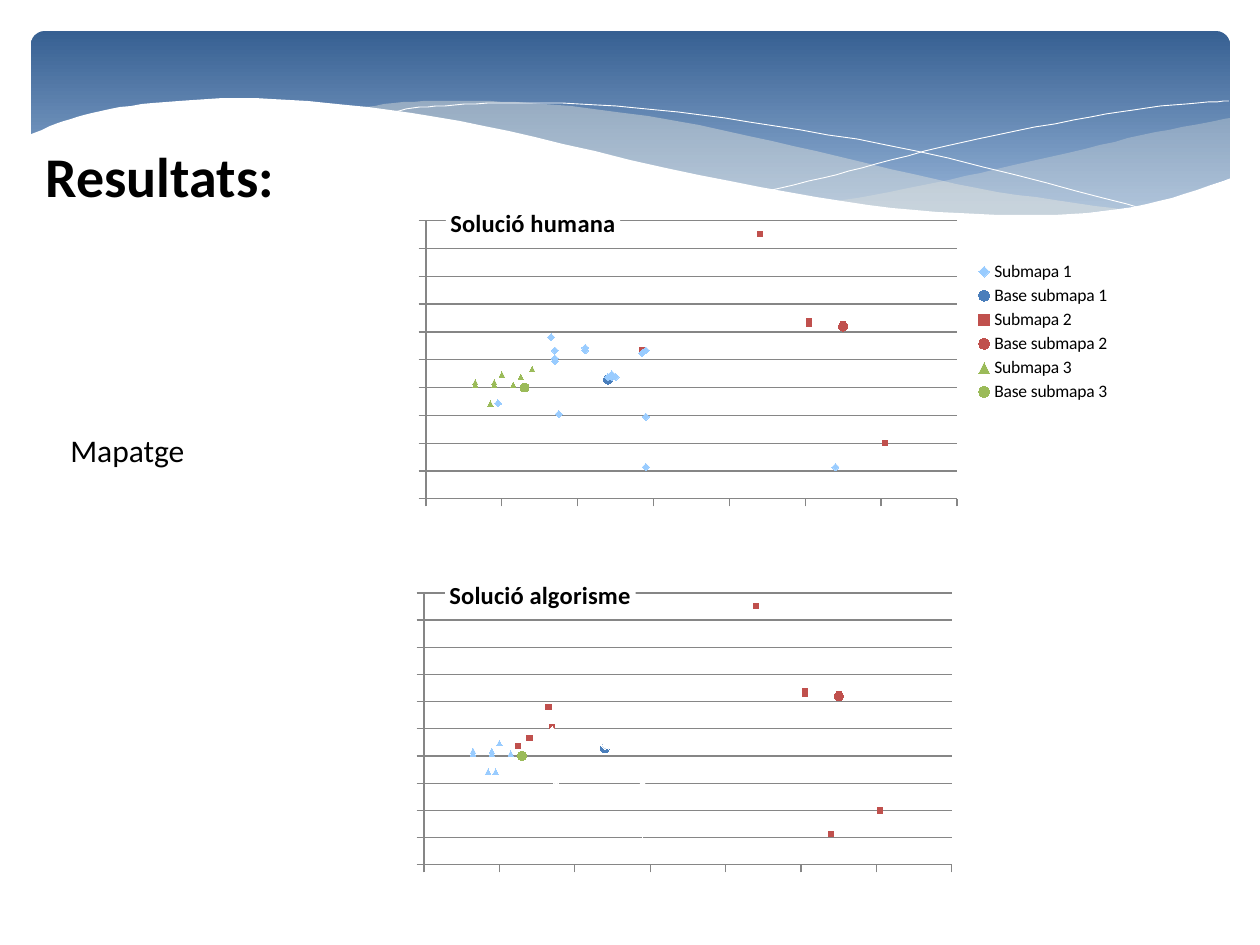
from lxml.etree import SubElement
from pptx import Presentation
from pptx.chart.data import XyChartData
from pptx.dml.color import RGBColor
from pptx.enum.chart import XL_CHART_TYPE, XL_LEGEND_POSITION, XL_MARKER_STYLE, XL_TICK_LABEL_POSITION, XL_TICK_MARK
from pptx.enum.shapes import MSO_SHAPE
from pptx.enum.text import MSO_ANCHOR, PP_ALIGN
from pptx.oxml.ns import qn
from pptx.util import Emu, Pt

PX = 914400 // 126
FONT = "Calibri"
CREAM, WHITE, BLACK, GREY = "EEECE1", "FFFFFF", "000000", "868686"
SKY, BLUE, RED, GREEN = "99CCFF", "4A7EBB", "C0504D", "9BBB59"

RIGHT_BAND = [
    [(1230, 118), (1194, 125), (1142, 135), (1085, 149), (1014, 165), (949, 180), (890, 192), (833, 202)],
    [(833, 202), (888, 208), (954, 214), (1012, 217), (1063, 215), (1110, 210), (1150, 204), (1187, 194),
     (1230, 178)],
]
MIDDLE_BAND = [
    [(1125, 210), (1055, 200), (977, 188), (890, 169), (793, 146), (717, 129), (648, 116), (586, 108),
     (529, 103), (479, 101), (433, 101), (394, 103), (360, 108)],
    [(360, 108), (431, 118), (509, 134), (566, 146), (668, 170), (757, 189), (838, 203), (910, 212),
     (974, 217), (1031, 218), (1080, 215), (1125, 210)],
]
FALLING_LINE = [[(389, 113), (413, 108), (445, 106), (488, 103), (546, 103), (616, 106), (701, 115),
                 (801, 130), (916, 151), (1047, 183), (1143, 209)]]
RISING_LINE = [[(772, 190), (823, 178), (876, 164), (942, 147), (1016, 131), (1091, 117), (1147, 108),
                (1198, 103), (1229, 101)]]
WHITE_WAVE = [
    [(1231, 178), (1184, 194), (1133, 207), (1071, 214), (999, 215), (915, 210), (816, 197), (699, 175),
     (563, 144), (460, 121), (368, 107), (290, 100), (223, 98), (166, 102), (120, 107), (84, 115),
     (58, 123), (29, 135)],
    [(29, 282)], [(1231, 282)],
]
WAVES = [
    (RIGHT_BAND, CREAM, 29, None),
    (MIDDLE_BAND, CREAM, 40, None),
    (FALLING_LINE, None, None, WHITE),
    (RISING_LINE, None, None, WHITE),
    (WHITE_WAVE, WHITE, 100, None),
]

DIAMOND, CIRCLE = XL_MARKER_STYLE.DIAMOND, XL_MARKER_STYLE.CIRCLE
SQUARE, TRIANGLE = XL_MARKER_STYLE.SQUARE, XL_MARKER_STYLE.TRIANGLE
HUMAN = [
    ("Submapa 1", DIAMOND, 4, SKY,
     [(19, 36), (35, 32), (34, 53), (50, 46), (58, 12), (108, 12), (34, 52), (42, 57), (58, 56), (49, 47),
      (49, 46), (48, 46), (58, 31), (42, 56), (57, 55), (33, 61), (34, 56)]),
    ("Base submapa 1", CIRCLE, 5, BLUE, [(48, 45)]),
    ("Submapa 2", SQUARE, 3, RED, [(110, 66), (101, 67), (101, 66), (88, 100), (121, 21), (57, 56)]),
    ("Base submapa 2", CIRCLE, 5, RED, [(110, 65)]),
    ("Submapa 3", TRIANGLE, 3, GREEN,
     [(13, 44), (25, 46), (20, 47), (28, 49), (17, 36), (18, 44), (18, 43), (13, 43), (23, 43)]),
    ("Base submapa 3", CIRCLE, 5, GREEN, [(26, 42)]),
]
ALGORITHM = [
    ("Series 1", DIAMOND, 4, WHITE,
     [(48, 46), (50, 46), (58, 56), (57, 56), (49, 47), (49, 46), (58, 31), (57, 55), (58, 12), (42, 56),
      (35, 32), (34, 52), (42, 57), (34, 56)]),
    ("Series 2", CIRCLE, 5, BLUE, [(48, 45)]),
    ("Series 3", SQUARE, 3, RED,
     [(101, 67), (101, 66), (110, 66), (88, 100), (121, 21), (108, 12), (33, 61), (25, 46), (28, 49),
      (34, 53)]),
    ("Series 4", CIRCLE, 5, RED, [(110, 65)]),
    ("Series 5", TRIANGLE, 3, SKY,
     [(19, 36), (18, 43), (17, 36), (23, 43), (13, 43), (13, 44), (18, 44), (20, 47)]),
    ("Series 6", CIRCLE, 5, GREEN, [(26, 42)]),
]
CHARTS = [
    dict(title="Solució humana", series=HUMAN, box=(412, 157, 711, 350), plot=(426, 221, 531, 279),
         title_at=(446, 202), legend=(973, 258, 140, 149)),
    dict(title="Solució algorisme", series=ALGORITHM, box=(413, 530, 551, 344), plot=(424, 593, 528, 272),
         title_at=(445, 573), legend=None),
]


def px(*lengths):
    return [Emu(round(length * PX)) for length in lengths]


def color(hex_string):
    return RGBColor.from_string(hex_string)


def paint(fill, hex_string):
    fill.solid()
    fill.fore_color.rgb = color(hex_string)


def smooth_points(keys, steps=4):
    padded = [keys[0], *keys, keys[-1]]
    points = [keys[0]]
    for a, b, c, d in zip(padded, padded[1:], padded[2:], padded[3:]):
        for step in range(1, steps + 1):
            t = step / steps
            points.append(tuple(
                b[i] + (c[i] - a[i]) * t / 2 + (2 * a[i] - 5 * b[i] + 4 * c[i] - d[i]) * t**2 / 2
                + (3 * b[i] - a[i] - 3 * c[i] + d[i]) * t**3 / 2 for i in (0, 1)))
    return points


def add_wave(slide, curves, fill, opacity, line):
    points = [point for curve in curves for point in smooth_points(curve)]
    builder = slide.shapes.build_freeform(*points[0], scale=PX)
    builder.add_line_segments(points[1:], close=fill is not None)
    shape = builder.convert_to_shape()
    shape.shadow.inherit = False
    if fill:
        paint(shape.fill, fill)
        fill_color = shape.fill._xPr.find(qn("a:solidFill"))[0]
        SubElement(fill_color, qn("a:alpha"), val=str(opacity * 1000))
        shape.line.fill.background()
    else:
        shape.fill.background()
        shape.line.color.rgb = color(line)
        shape.line.width = Pt(0.5)


def place(element, index, box, x, y, width=None, height=None):
    for old_layout in element.findall(qn("c:layout")):
        element.remove(old_layout)
    layout = SubElement(element, qn("c:layout"))
    element.insert(index, layout)
    manual = SubElement(layout, qn("c:manualLayout"))
    left, top, chart_width, chart_height = box
    settings = [("xMode", "edge"), ("yMode", "edge"),
                ("x", (x - left) / chart_width), ("y", (y - top) / chart_height)]
    if width:
        settings += [("w", width / chart_width), ("h", height / chart_height)]
    if element.tag == qn("c:plotArea"):
        settings.insert(0, ("layoutTarget", "inner"))
    for name, value in settings:
        SubElement(manual, qn(f"c:{name}"), val=str(value))


def format_axis(axis, maximum, unit):
    axis.minimum_scale, axis.maximum_scale, axis.major_unit = 0, maximum, unit
    axis.major_tick_mark = XL_TICK_MARK.OUTSIDE
    axis.tick_label_position = XL_TICK_LABEL_POSITION.NONE
    axis.format.line.color.rgb = color(GREY)


def add_scatter(slide, title, series, box, plot, title_at, legend):
    data = XyChartData()
    for name, _, _, _, points in series:
        entry = data.add_series(name)
        for x, y in points:
            entry.add_data_point(x, y)
    chart = slide.shapes.add_chart(XL_CHART_TYPE.XY_SCATTER, *px(*box), data).chart
    chart.font.name, chart.font.size = FONT, Pt(10)
    chart.font.color.rgb = color(BLACK)
    for drawn, (_, style, size, marker_color, _) in zip(chart.plots[0].series, series):
        drawn.format.line.fill.background()
        drawn.smooth = False
        drawn.marker.style, drawn.marker.size = style, size
        paint(drawn.marker.format.fill, marker_color)
        drawn.marker.format.line.fill.background()
    chart.plots[0].vary_by_categories = False

    format_axis(chart.category_axis, 140, 20)
    format_axis(chart.value_axis, 105, 10.5)
    chart.category_axis.has_major_gridlines = False
    chart.value_axis.has_major_gridlines = True
    chart.value_axis.major_gridlines.format.line.color.rgb = color(GREY)
    place(chart.element.find(".//" + qn("c:plotArea")), 0, box, *plot)

    chart_title = chart.chart_title
    chart_title.text_frame.text = title
    font = chart_title.text_frame.paragraphs[0].font
    font.name, font.size, font.bold = FONT, Pt(14), True
    font.color.rgb = color(BLACK)
    paint(chart_title.format.fill, WHITE)
    place(chart_title.element, 1, box, *title_at)
    chart_title.element.find(qn("c:overlay")).set("val", "1")

    chart.has_legend = legend is not None
    if legend:
        chart.legend.position = XL_LEGEND_POSITION.RIGHT
        chart.legend.include_in_layout = False
        place(chart.legend.element if hasattr(chart.legend, "element") else chart.legend._element,
              1, box, *legend)
    return chart


def write(shape, text, box, size, bold):
    shape.left, shape.top, shape.width, shape.height = px(*box)
    frame = shape.text_frame
    frame.text = text
    frame.word_wrap = True
    frame.vertical_anchor = MSO_ANCHOR.TOP
    paragraph = frame.paragraphs[0]
    paragraph.alignment = PP_ALIGN.LEFT
    paragraph.font.name, paragraph.font.size, paragraph.font.bold = FONT, Pt(size), bold
    paragraph.font.color.rgb = color(BLACK)


def main():
    presentation = Presentation()
    presentation.slide_width, presentation.slide_height = px(1260, 945)
    slide = presentation.slides.add_slide(presentation.slide_layouts[5])

    banner = slide.shapes.add_shape(MSO_SHAPE.ROUNDED_RECTANGLE, *px(31, 31, 1199, 197))
    banner.adjustments[0] = 0.07
    banner.shadow.inherit = False
    banner.line.fill.background()
    banner.fill.gradient()
    banner.fill.gradient_angle = 270
    for stop, position, hex_string in zip(banner.fill.gradient_stops, (0, 0.9), ("376092", "95B3D7")):
        stop.position, stop.color.rgb = position, color(hex_string)
    for wave in WAVES:
        add_wave(slide, *wave)

    title = slide.shapes.title
    slide.shapes.element.append(title.element)
    write(title, "Resultats:", (33, 135, 268, 81), 32, True)
    human_chart, _ = [add_scatter(slide, **chart) for chart in CHARTS]
    paint(human_chart.plots[0].series[2].points[0].marker.format.fill, BLACK)
    write(slide.shapes.add_textbox(0, 0, 0, 0), "Mapatge", (58, 425, 263, 50), 18, False)
    presentation.save("out.pptx")


if __name__ == "__main__":
    main()
